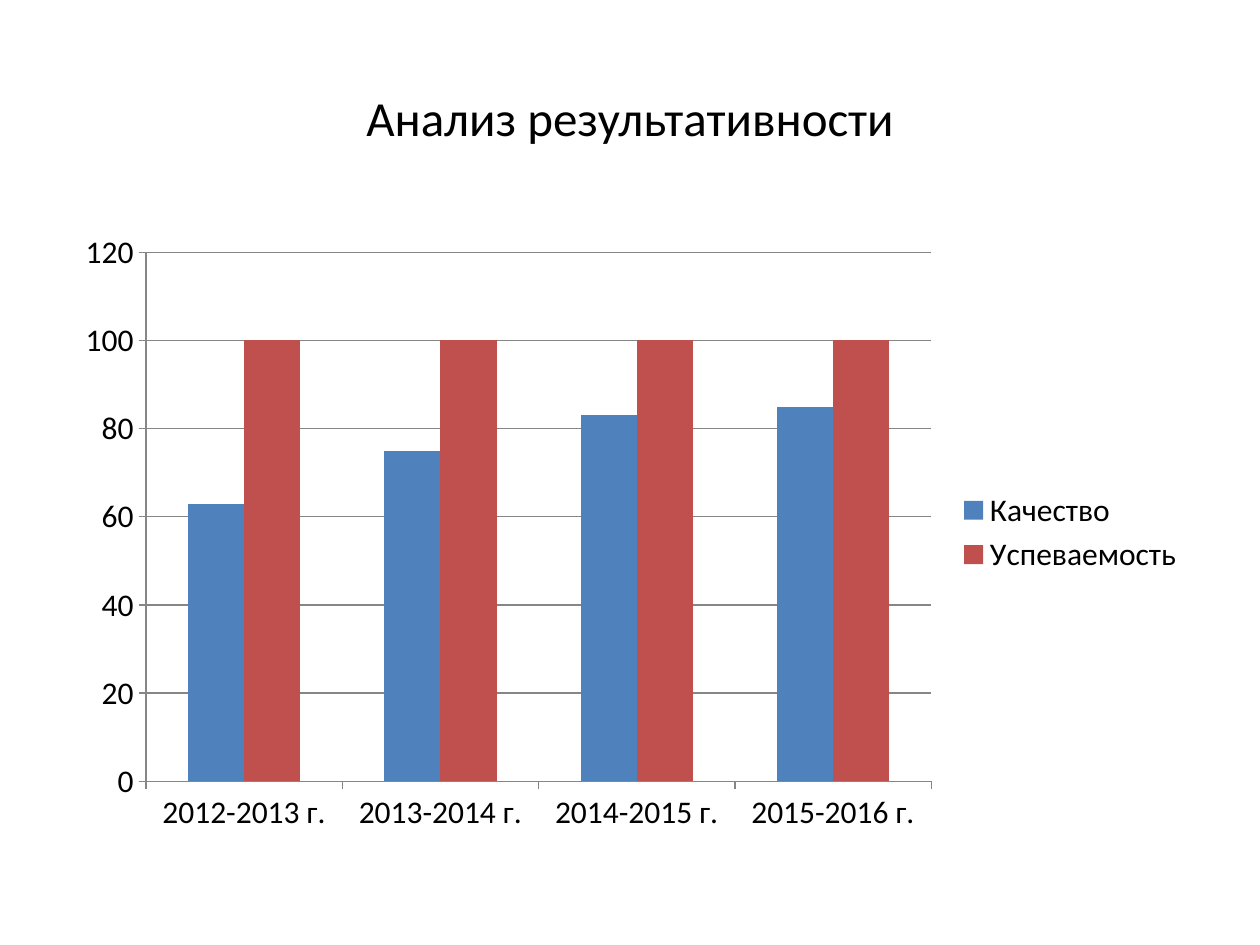
import pptx
import pptx.chart.data
import pptx.dml.color
import pptx.enum.chart
import pptx.enum.text
import pptx.util
from pptx.util import Cm

BLACK = pptx.dml.color.RGBColor(0x00, 0x00, 0x00)
GRAY = pptx.dml.color.RGBColor(0x86, 0x86, 0x86)
BLUE = pptx.dml.color.RGBColor(0x4F, 0x81, 0xBD)
RED = pptx.dml.color.RGBColor(0xC0, 0x50, 0x4D)
FONT = "Calibri"

prs = pptx.Presentation()
prs.slide_width, prs.slide_height = Cm(25.4), Cm(19.05)
s = prs.slides.add_slide(prs.slide_layouts[5])

# Title
title = s.shapes.title
title.left, title.top, title.width, title.height = Cm(1.27), Cm(0.76), Cm(22.86), Cm(3.18)
tf = title.text_frame
tf.vertical_anchor = pptx.enum.text.MSO_ANCHOR.MIDDLE
p = tf.paragraphs[0]
p.text = "Анализ результативности"
p.alignment = pptx.enum.text.PP_ALIGN.CENTER
p.font.name = FONT
p.font.size = pptx.util.Pt(28)
p.font.color.rgb = BLACK

# Chart data
data = pptx.chart.data.CategoryChartData()
data.categories = [f"{year}-{year + 1} г." for year in range(2012, 2016)]
data.add_series("Качество", (63, 75, 83, 85))
data.add_series("Успеваемость", (100, 100, 100, 100))

# Column chart
chart = s.shapes.add_chart(
    pptx.enum.chart.XL_CHART_TYPE.COLUMN_CLUSTERED,
    Cm(1.27), Cm(4.45), Cm(22.86), Cm(12.57), data).chart
chart.has_title = False
chart.font.name = FONT
chart.font.size = pptx.util.Pt(18)
chart.font.color.rgb = BLACK
plot = chart.plots[0]
plot.gap_width = 150
plot.overlap = 0
plot.vary_by_categories = False
for series, color in zip(plot.series, (BLUE, RED)):
    series.format.fill.solid()
    series.format.fill.fore_color.rgb = color

# Axes and gridlines
axes = chart.category_axis, chart.value_axis
for axis in axes:
    axis.major_tick_mark = pptx.enum.chart.XL_TICK_MARK.OUTSIDE
    axis.minor_tick_mark = pptx.enum.chart.XL_TICK_MARK.NONE
chart.value_axis.minimum_scale = 0
chart.value_axis.maximum_scale = 120
chart.value_axis.major_unit = 20
for part in (*axes, chart.value_axis.major_gridlines):
    part.format.line.color.rgb = GRAY
    part.format.line.width = pptx.util.Pt(0.75)

# Legend
chart.has_legend = True
chart.legend.position = pptx.enum.chart.XL_LEGEND_POSITION.RIGHT
chart.legend.include_in_layout = False

prs.save("out.pptx")
